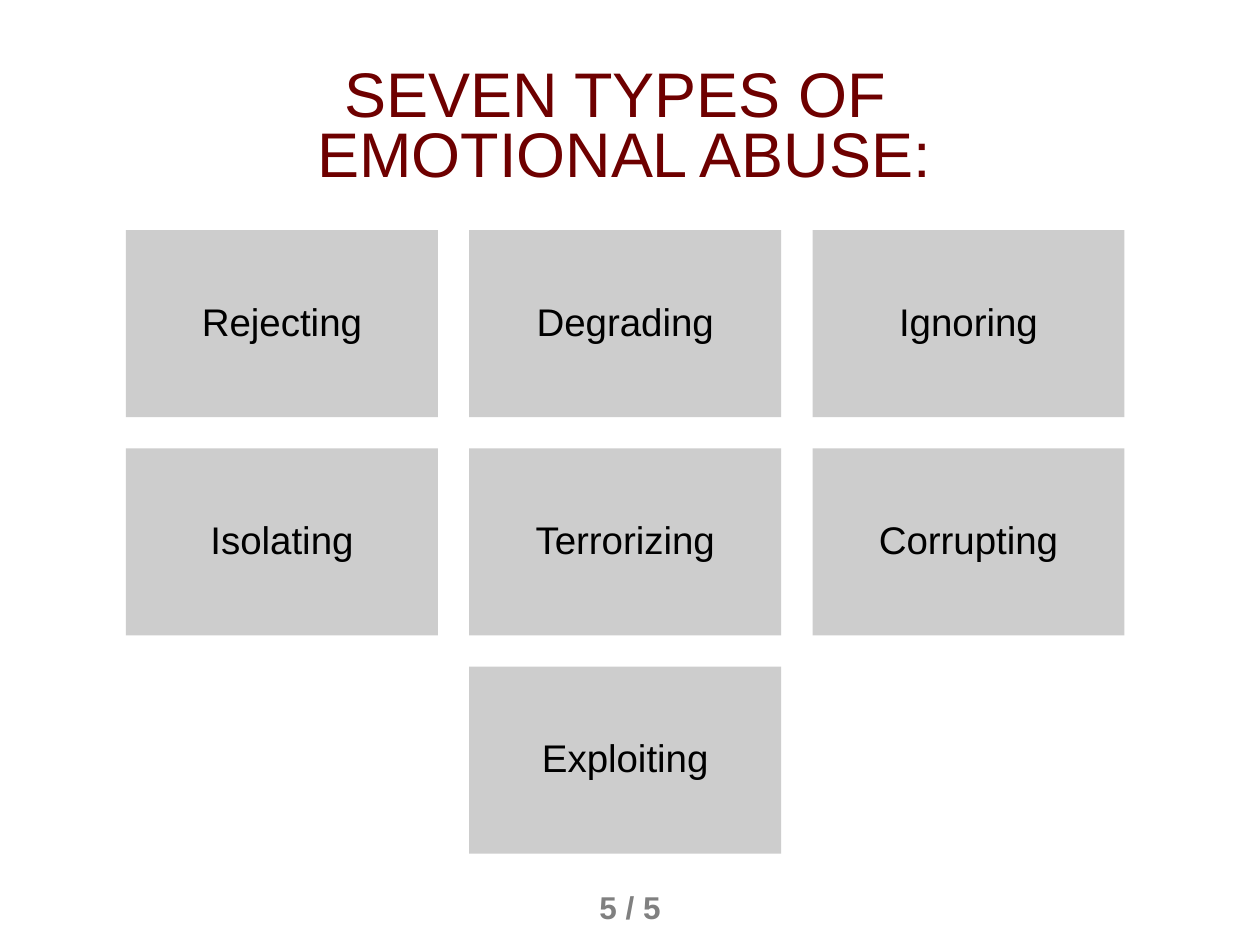
from dataclasses import dataclass

from pptx import Presentation
from pptx import util as u
from pptx.dml.color import RGBColor
from pptx.enum import shapes, text

FONT = "Arial"
MAROON, GREY, TILE_GREY, BLACK = "6E0000", "808080", "CDCDCD", "000000"

# Tile grid, in centimetres
COLUMNS = 3
GRID_LEFT, GRID_TOP = 2.54, 4.64
TILE_WIDTH, TILE_HEIGHT, GAP = 6.29, 3.77, 0.63
TYPES = ["Rejecting", "Degrading", "Ignoring",
         "Isolating", "Terrorizing", "Corrupting", "Exploiting"]


@dataclass
class Tile:
    label: str
    left: float
    top: float


def color(code: str) -> RGBColor:
    return RGBColor.from_string(code)


def write(box, words: str, *, size: float, ink: str, bold: bool = False,
          spacing: float = 1.0, anchor=text.MSO_ANCHOR.MIDDLE,
          insets: tuple = (0.25, 0.13, 0.25, 0.13)) -> None:
    """Fill a box with one centred paragraph; insets are left, top, right, bottom."""
    frame = box.text_frame
    frame.word_wrap = True
    frame.vertical_anchor = anchor
    (frame.margin_left, frame.margin_top,
     frame.margin_right, frame.margin_bottom) = map(u.Cm, insets)
    para = frame.paragraphs[0]
    para.text = words
    para.alignment = text.PP_ALIGN.CENTER
    para.line_spacing = spacing
    for span in para.runs:
        span.font.name = FONT
        span.font.size = u.Pt(size)
        span.font.bold = bold
        span.font.color.rgb = color(ink)


def layout_tiles(labels: list[str]) -> list[Tile]:
    """Place the labels row by row, centring a short last row."""
    tiles = []
    for start in range(0, len(labels), COLUMNS):
        row = labels[start:start + COLUMNS]
        shift = (COLUMNS - len(row)) / 2
        top = GRID_TOP + start // COLUMNS * (TILE_HEIGHT + GAP)
        for column, label in enumerate(row):
            left = GRID_LEFT + (column + shift) * (TILE_WIDTH + GAP)
            tiles.append(Tile(label, left, top))
    return tiles


def draw_tile(page, tile: Tile) -> None:
    box = page.shapes.add_shape(
        shapes.MSO_SHAPE.RECTANGLE, u.Cm(tile.left), u.Cm(tile.top),
        u.Cm(TILE_WIDTH), u.Cm(TILE_HEIGHT))
    box.shadow.inherit = False
    box.fill.solid()
    box.fill.fore_color.rgb = color(TILE_GREY)
    box.line.fill.background()
    write(box, tile.label, size=22, ink=BLACK, spacing=0.9,
          insets=(0.23, 0.23, 0.23, 0.23))


def main() -> None:
    deck = Presentation()
    deck.slide_width, deck.slide_height = u.Cm(25.4), u.Cm(19.05)
    page = deck.slides.add_slide(deck.slide_layouts[6])

    # Title
    title = page.shapes.add_textbox(u.Cm(1.57), u.Cm(0.64), u.Cm(21.95), u.Cm(3.94))
    write(title, "SEVEN TYPES OF \nEMOTIONAL ABUSE:".replace("\n", "\v"),
          size=36, ink=MAROON, spacing=0.8, insets=(0.33, 0, 0.25, 0))

    # Tiles
    for tile in layout_tiles(TYPES):
        draw_tile(page, tile)

    # Page number
    number = page.shapes.add_textbox(u.Cm(11.43), u.Cm(17.78), u.Cm(2.54), u.Cm(1.02))
    write(number, "5 / 5", size=18, ink=GREY, bold=True, anchor=text.MSO_ANCHOR.TOP)

    deck.save("out.pptx")


if __name__ == "__main__":
    main()
